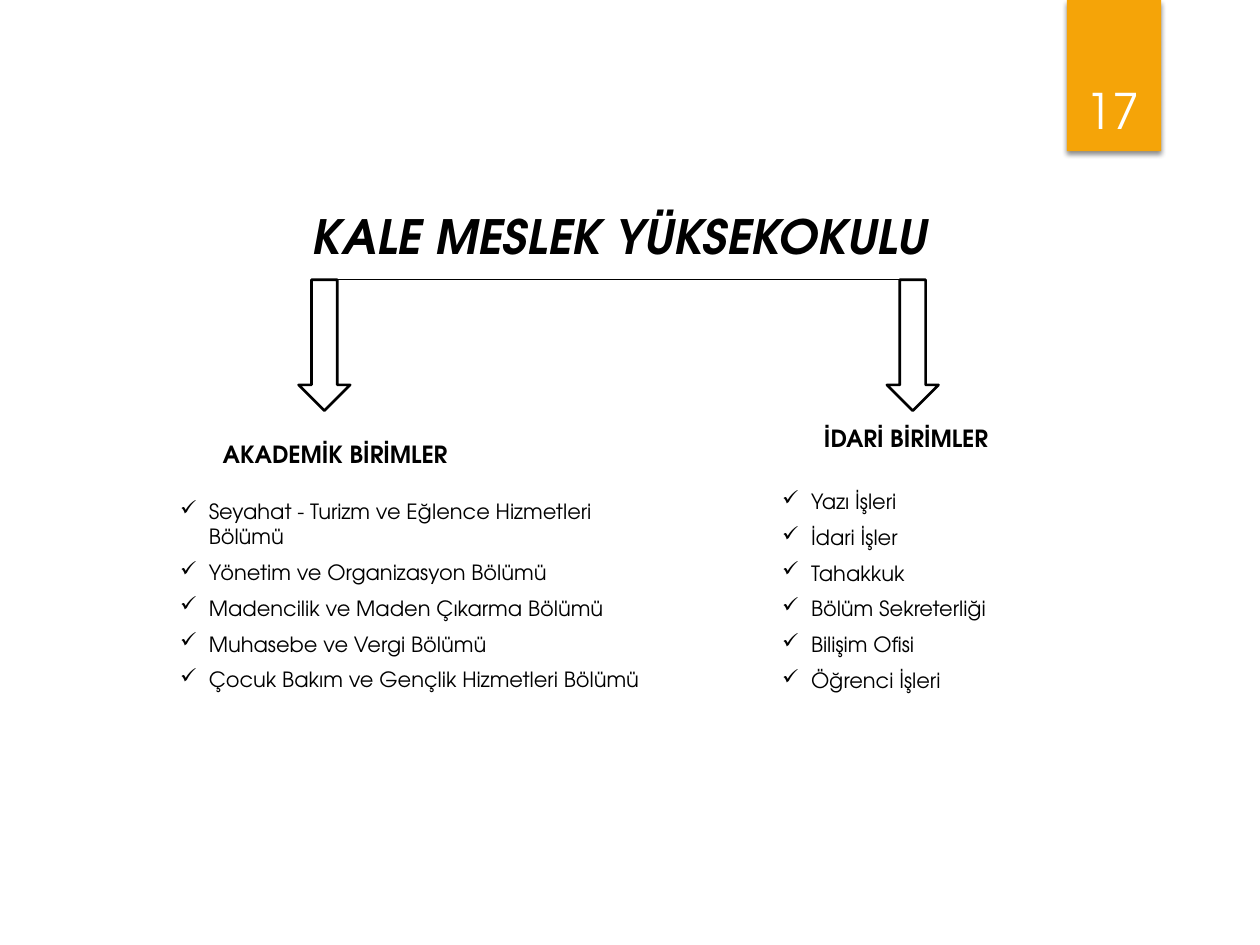
from dataclasses import dataclass

from lxml.etree import SubElement
from pptx import Presentation
from pptx.dml.color import RGBColor
from pptx.enum.shapes import MSO_CONNECTOR, MSO_SHAPE
from pptx.enum.text import MSO_ANCHOR, MSO_AUTO_SIZE, PP_ALIGN
from pptx.oxml import parse_xml
from pptx.oxml.ns import nsdecls, qn
from pptx.util import Cm, Pt


@dataclass(frozen=True)
class Theme:
    """Fonts, colours and type sizes of the slide."""
    font: str = "TeX Gyre Adventor"
    ink: RGBColor = RGBColor(0, 0, 0)
    paper: RGBColor = RGBColor(255, 255, 255)
    accent: RGBColor = RGBColor(0xF5, 0xA4, 0x08)
    title: float = 27
    number: float = 28
    heading: float = 13.5
    body: float = 12
    item_gap: float = 6


@dataclass(frozen=True)
class Box:
    """A rectangle in centimetres."""
    left: float
    top: float
    width: float
    height: float

    def inner(self, left, top, width, height):
        """Return a box offset from this one's corner."""
        return Box(self.left + left, self.top + top, width, height)

    def lengths(self):
        """Return left, top, width and height as slide lengths."""
        return Cm(self.left), Cm(self.top), Cm(self.width), Cm(self.height)


THEME = Theme()
ARROW_WIDTH, ARROW_HEIGHT = 1.04, 2.64
ACADEMIC_UNITS = [
    "Seyahat - Turizm ve Eğlence Hizmetleri Bölümü",
    "Yönetim ve Organizasyon Bölümü",
    "Madencilik ve Maden Çıkarma Bölümü",
    "Muhasebe ve Vergi Bölümü",
    "Çocuk Bakım ve Gençlik Hizmetleri Bölümü",
]
ADMINISTRATIVE_UNITS = [
    "Yazı İşleri",
    "İdari İşler",
    "Tahakkuk",
    "Bölüm Sekreterliği",
    "Bilişim Ofisi",
    "Öğrenci İşleri",
]


def format_paragraph(paragraph, size, color=THEME.ink, bold=False,
                     italic=False, alignment=PP_ALIGN.LEFT):
    """Align a paragraph and format its runs."""
    paragraph.alignment = alignment
    for run in paragraph.runs:
        font = run.font
        font.name, font.size = THEME.font, Pt(size)
        font.bold, font.italic = bold, italic
        font.color.rgb = color


def add_text(slide, box, text, size, anchor=MSO_ANCHOR.TOP, **style):
    """Add a wrapping text box with one formatted paragraph per line."""
    text_frame = slide.shapes.add_textbox(*box.lengths()).text_frame
    text_frame.word_wrap = True
    text_frame.vertical_anchor = anchor
    text_frame.text = text
    for paragraph in text_frame.paragraphs:
        format_paragraph(paragraph, size, **style)
    return text_frame


def add_check_list(slide, box, items):
    """Add a list with check mark bullets."""
    text_frame = add_text(slide, box, "\n".join(items), THEME.body)
    for index, paragraph in enumerate(text_frame.paragraphs):
        properties = paragraph._p.get_or_add_pPr()
        properties.set("marL", str(Cm(0.58)))
        properties.set("indent", str(-Cm(0.58)))
        SubElement(properties, qn("a:buChar"), char="✓")
        if index:
            paragraph.space_before = Pt(THEME.item_gap)


def add_page_tab(slide, box, number):
    """Add the shadowed page tab and its number."""
    tab = slide.shapes.add_shape(MSO_SHAPE.RECTANGLE, *box.lengths())
    tab.fill.solid()
    tab.fill.fore_color.rgb = THEME.accent
    tab.line.fill.background()
    tab._element.spPr.append(parse_xml(
        f'<a:effectLst {nsdecls("a")}>'
        f'<a:outerShdw blurRad="{Pt(3)}" dist="{Pt(2)}" dir="5400000" rotWithShape="0">'
        '<a:srgbClr val="000000"><a:alpha val="45000"/></a:srgbClr>'
        '</a:outerShdw></a:effectLst>'))
    add_text(slide, box.inner(0.05, 0.81, 1.75, 2.13), number, THEME.number,
             anchor=MSO_ANCHOR.BOTTOM, color=THEME.paper,
             alignment=PP_ALIGN.CENTER)


def place_title(slide, box, text):
    """Move, fill and format the title placeholder."""
    title = slide.shapes.title
    title.left, title.top, title.width, title.height = box.lengths()
    text_frame = title.text_frame
    text_frame.text = text
    text_frame.auto_size = MSO_AUTO_SIZE.NONE
    text_frame.vertical_anchor = MSO_ANCHOR.TOP
    format_paragraph(text_frame.paragraphs[0], THEME.title, bold=True,
                     italic=True, alignment=PP_ALIGN.CENTER)


def add_arrow(slide, box):
    """Add an outlined down arrow."""
    arrow = slide.shapes.add_shape(MSO_SHAPE.DOWN_ARROW, *box.lengths())
    arrow.shadow.inherit = False
    arrow.fill.solid()
    arrow.fill.fore_color.rgb = THEME.paper
    arrow.line.color.rgb = THEME.ink
    arrow.line.width = Pt(1.5)


def add_fork(slide, box):
    """Add two down arrows joined by a line across their tops."""
    far_left = box.width - ARROW_WIDTH
    for left in (0, far_left):
        add_arrow(slide, box.inner(left, 0, ARROW_WIDTH, ARROW_HEIGHT))
    start = box.left + ARROW_WIDTH / 2
    line = slide.shapes.add_connector(
        MSO_CONNECTOR.STRAIGHT, Cm(start), Cm(box.top),
        Cm(start + far_left), Cm(box.top))
    line.line.color.rgb = THEME.ink
    line.line.width = Pt(0.75)
    SubElement(line._element.spPr, qn("a:effectLst"))


def add_units(slide, box, heading, heading_box, items, list_top, alignment):
    """Add a heading and the list of units below it."""
    add_text(slide, box.inner(*heading_box), heading, THEME.heading,
             bold=True, alignment=alignment)
    add_check_list(slide, box.inner(0, list_top, box.width,
                                    box.height - list_top), items)


def main():
    """Build and save the slide."""
    presentation = Presentation()
    presentation.slide_width, presentation.slide_height = Cm(25.4), Cm(19.05)
    slide = presentation.slides.add_slide(presentation.slide_layouts[5])
    add_page_tab(slide, Box(21.51, 0, 1.9, 3.05), "17")
    place_title(slide, Box(5.61, 4.06, 13.79, 1.42), "KALE MESLEK YÜKSEKOKULU")
    add_fork(slide, Box(6.02, 5.64, 12.9, ARROW_HEIGHT))
    add_units(slide, Box(3.38, 8.74, 9.91, 5.56), "AKADEMİK BİRİMLER",
              (0.86, 0, 6.45, 0.84), ACADEMIC_UNITS, 1.19, PP_ALIGN.LEFT)
    add_units(slide, Box(15.52, 8.43, 5.84, 5.92), "İDARİ BİRİMLER",
              (-0.33, 0, 6.15, 0.84), ADMINISTRATIVE_UNITS, 1.3, PP_ALIGN.CENTER)
    presentation.save("out.pptx")


if __name__ == "__main__":
    main()
